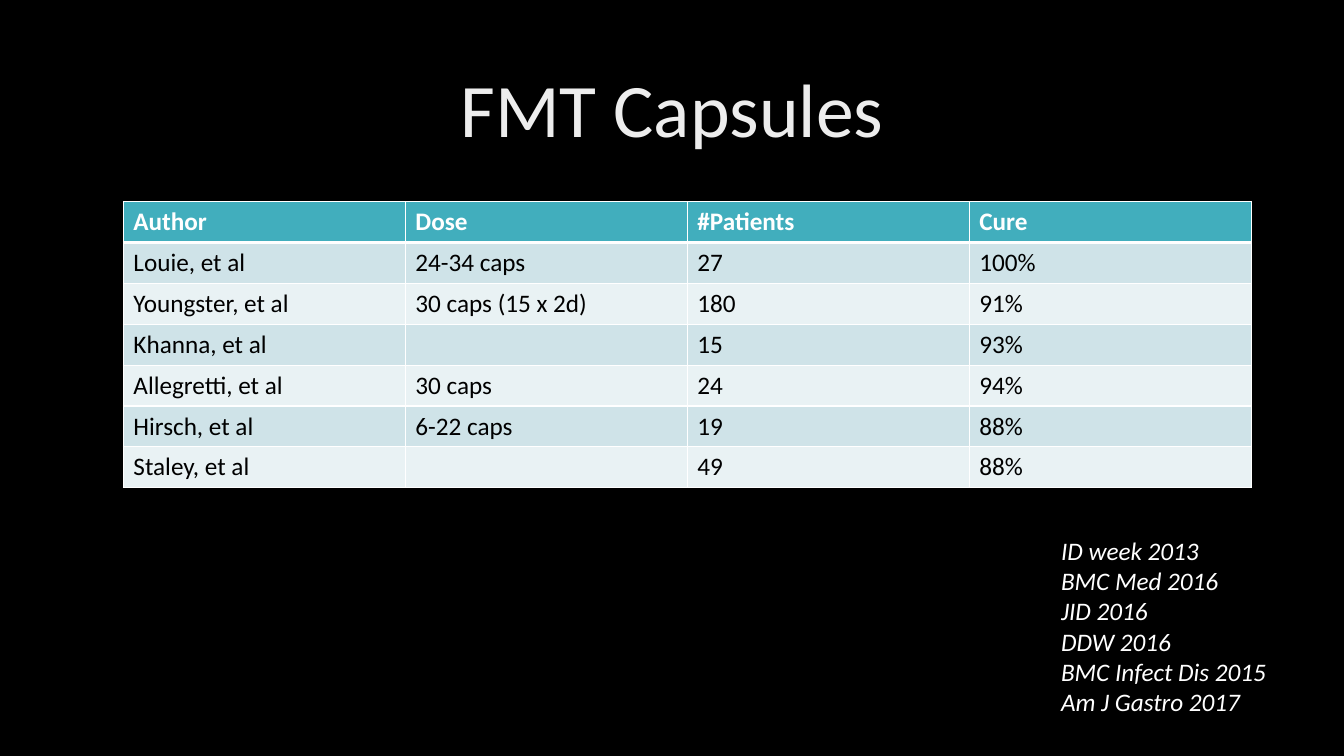
from lxml.etree import SubElement
from pptx import Presentation
from pptx.dml.color import RGBColor
from pptx.enum.text import MSO_ANCHOR as Anchor, MSO_AUTO_SIZE as AutoSize, PP_ALIGN as Align
from pptx.oxml.ns import qn
from pptx.util import Cm, Pt

BLACK = RGBColor(0x00, 0x00, 0x00)
WHITE = RGBColor(0xFF, 0xFF, 0xFF)
TITLE_GREY = RGBColor(0xED, 0xED, 0xED)
HEADER_TEAL = RGBColor(0x41, 0xAE, 0xBD)
BAND_DARK = RGBColor(0xCF, 0xE3, 0xE8)
BAND_LIGHT = RGBColor(0xE9, 0xF2, 0xF4)
FONT = "Calibri"

STUDIES = [
    ("Author", "Dose", "#Patients", "Cure"),
    ("Louie, et al", "24-34 caps", "27", "100%"),
    ("Youngster, et al", "30 caps (15 x 2d)", "180", "91%"),
    ("Khanna, et al", "", "15", "93%"),
    ("Allegretti, et al", "30 caps", "24", "94%"),
    ("Hirsch, et al", "6-22 caps", "19", "88%"),
    ("Staley, et al", "", "49", "88%"),
]
SOURCES = [
    "ID week 2013",
    "BMC Med 2016",
    "JID 2016",
    "DDW 2016",
    "BMC Infect Dis 2015",
    "Am J Gastro 2017",
]


def style_text(frame, size, color, bold=False, italic=False):
    for para in frame.paragraphs:
        for span in para.runs:
            font = span.font
            font.name = FONT
            font.size = Pt(size)
            font.color.rgb = color
            font.bold = bold
            font.italic = italic


def add_text(slide, text, left, top, width, height):
    box = slide.shapes.add_textbox(Cm(left), Cm(top), Cm(width), Cm(height))
    frame = box.text_frame
    frame.word_wrap = True
    frame.text = text
    return frame


def add_title(slide, text):
    frame = add_text(slide, text, 2.33, 1.01, 29.21, 3.68)
    frame.vertical_anchor = Anchor.MIDDLE
    para = frame.paragraphs[0]
    para.alignment = Align.CENTER
    para.line_spacing = 0.9
    style_text(frame, 54, TITLE_GREY)


def add_sources(slide, lines):
    frame = add_text(slide, "\n".join(lines), 26.49, 13.36, 5.77, 4.88)
    frame.auto_size = AutoSize.SHAPE_TO_FIT_TEXT
    style_text(frame, 18, WHITE, italic=True)


def set_borders(cell, top, bottom):
    """Draw white cell borders, 1 pt at the sides; call before the cell is filled."""
    properties = cell._tc.get_or_add_tcPr()
    for side, width in (("L", 1), ("R", 1), ("T", top), ("B", bottom)):
        line = SubElement(properties, qn(f"a:ln{side}"), w=str(Pt(width)))
        fill = SubElement(line, qn("a:solidFill"))
        SubElement(fill, qn("a:srgbClr"), val=str(WHITE))


def add_study_table(slide, rows):
    row_height = Cm(1.03)
    table = slide.shapes.add_table(
        len(rows), len(rows[0]), Cm(3.11), Cm(5.08), Cm(28.42), row_height * len(rows)
    ).table
    for row_index, values in enumerate(rows):
        table.rows[row_index].height = row_height
        is_header = row_index == 0
        if is_header:
            background = HEADER_TEAL
        else:
            background = BAND_DARK if row_index % 2 else BAND_LIGHT
        for column_index, value in enumerate(values):
            cell = table.cell(row_index, column_index)
            set_borders(cell, top=3 if row_index == 1 else 1, bottom=3 if is_header else 1)
            cell.fill.solid()
            cell.fill.fore_color.rgb = background
            cell.text_frame.text = value
            style_text(cell.text_frame, 18, WHITE if is_header else BLACK, bold=is_header)


def main():
    deck = Presentation()
    deck.slide_width, deck.slide_height = Cm(33.87), Cm(19.05)
    slide = deck.slides.add_slide(deck.slide_layouts[6])
    slide.background.fill.solid()
    slide.background.fill.fore_color.rgb = BLACK
    add_title(slide, "FMT Capsules")
    add_study_table(slide, STUDIES)
    add_sources(slide, SOURCES)
    deck.save("out.pptx")


if __name__ == "__main__":
    main()
